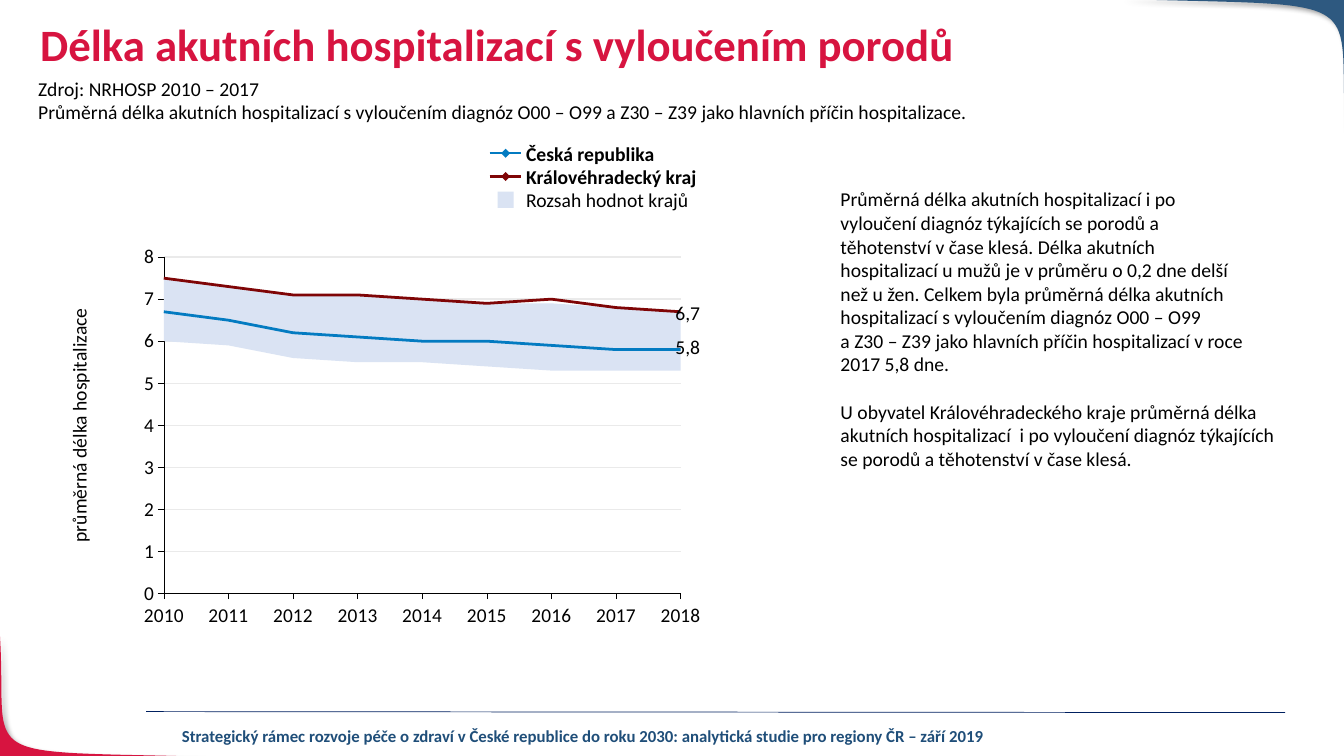
from lxml.etree import SubElement
from pptx import Presentation
from pptx.chart.data import CategoryChartData
from pptx.dml.color import RGBColor
from pptx.enum.chart import XL_CHART_TYPE, XL_TICK_MARK
from pptx.enum.shapes import MSO_CONNECTOR, MSO_SHAPE
from pptx.enum.text import MSO_ANCHOR, PP_ALIGN
from pptx.oxml import parse_xml
from pptx.oxml.ns import nsdecls, qn
from pptx.util import Pt

RED = RGBColor(0xD7, 0x14, 0x40)
STEEL = RGBColor(0x2E, 0x59, 0x80)
NAVY = RGBColor(0x00, 0x20, 0x60)
INK = RGBColor(0x1F, 0x4E, 0x79)
BLUE = RGBColor(0x03, 0x7B, 0xC1)
WINE = RGBColor(0x7F, 0x05, 0x06)
PALE = RGBColor(0xDA, 0xE3, 0xF3)
GRID = RGBColor(0xEA, 0xEA, 0xEA)
BLACK = RGBColor(0, 0, 0)

TITLE = "Délka akutních hospitalizací s vyloučením porodů"
SOURCE = [
    "Zdroj: NRHOSP 2010 – 2017",
    "Průměrná délka akutních hospitalizací s vyloučením diagnóz O00 – O99 "
    "a Z30 – Z39 jako hlavních příčin hospitalizace.",
]
NATION = [
    "Průměrná délka akutních hospitalizací i po",
    "vyloučení diagnóz týkajících se porodů a",
    "těhotenství v čase klesá. Délka akutních",
    "hospitalizací u mužů je v průměru o 0,2 dne delší",
    "než u žen. Celkem byla průměrná délka akutních",
    "hospitalizací s vyloučením diagnóz O00 – O99",
    "a Z30 – Z39 jako hlavních příčin hospitalizací v roce",
    "2017 5,8 dne.",
]
REGION = [
    "U obyvatel Královéhradeckého kraje průměrná délka",
    "akutních hospitalizací  i po vyloučení diagnóz týkajících",
    "se porodů a těhotenství v čase klesá.",
]
AXIS = "průměrná délka hospitalizace"
FOOTER = ("Strategický rámec rozvoje péče o zdraví v České republice do roku 2030: "
          "analytická studie pro regiony ČR – září 2019")
YEARS = [str(year) for year in range(2010, 2019)]
BANDS = [
    ("Minimum krajů", (6, 5.9, 5.6, 5.5, 5.5, 5.4, 5.3, 5.3, 5.3), None),
    ("Rozsah hodnot krajů", (1.5, 1.4, 1.5, 1.6, 1.5, 1.5, 1.6, 1.5, 1.4), PALE),
]
TRENDS = [
    ("Česká republika", (6.7, 6.5, 6.2, 6.1, 6, 6, 5.9, 5.8, 5.8), BLUE),
    ("Královéhradecký kraj", (7.5, 7.3, 7.1, 7.1, 7, 6.9, 7, 6.8, 6.7), WINE),
]
ENDS = [("6,7", 214.6), ("5,8", 239)]
# start, two control points, end, outer corner
CORNERS = [
    (RED, [(153.4, 540.7), (-24.5, 535.7), (5.8, 546.5), (0, 453.6), (-0.7, 540.7)]),
    (STEEL, [(799.9, -0.7), (986.4, 5), (954.7, -7.2), (961.2, 102.2), (961.2, -0.7)]),
]
PLOT = {"x": 0.102, "y": 0.065, "w": 0.879, "h": 0.8}
STEPS = 40


def bezier(pts, t):
    weights = ((1 - t) ** 3, 3 * t * (1 - t) ** 2, 3 * t * t * (1 - t), t ** 3)
    return tuple(Pt(sum(w * p[axis] for w, p in zip(weights, pts))) for axis in (0, 1))


def draw_corner(slide, color, pts):
    curve = [bezier(pts[:4], i / STEPS) for i in range(STEPS + 1)]
    outline = slide.shapes.build_freeform(*curve[0], scale=1.0)
    outline.add_line_segments(curve[1:] + [tuple(Pt(v) for v in pts[4])], close=True)
    shape = outline.convert_to_shape()
    shape.fill.solid()
    shape.fill.fore_color.rgb = color
    shape.line.fill.background()
    shape.shadow.inherit = False
    effects = shape.element.spPr.find(qn("a:effectLst"))
    effects.append(parse_xml(
        f'<a:outerShdw {nsdecls("a")} blurRad="50800" dist="38100" dir="2700000" '
        'algn="tl" rotWithShape="0"><a:srgbClr val="000000">'
        '<a:alpha val="40000"/></a:srgbClr></a:outerShdw>'))


def add_text(slide, lines, box, size=14, color=BLACK, bold=False,
             align=PP_ALIGN.LEFT, wrap=True, label=False):
    """Add one paragraph per line; a label has no margins and sits mid-height."""
    shape = slide.shapes.add_textbox(*map(Pt, box))
    frame = shape.text_frame
    frame.word_wrap = wrap
    if label:
        frame.margin_left = frame.margin_right = 0
        frame.margin_top = frame.margin_bottom = 0
        frame.vertical_anchor = MSO_ANCHOR.MIDDLE
    for i, line in enumerate(lines):
        para = frame.paragraphs[0] if i == 0 else frame.add_paragraph()
        para.text = line
        para.alignment = align
        para.font.name = "Calibri"
        para.font.size = Pt(size)
        para.font.bold = bold
        para.font.color.rgb = color
    return shape


def add_line(slide, ends, color, width):
    line = slide.shapes.add_connector(MSO_CONNECTOR.STRAIGHT, *map(Pt, ends))
    line.line.color.rgb = color
    line.line.width = Pt(width)
    SubElement(line.element.spPr, qn("a:effectLst"))


def add_mark(slide, kind, x, y, size, color):
    """Add a legend mark centred on x, y."""
    mark = slide.shapes.add_shape(
        kind, Pt(x - size / 2), Pt(y - size / 2), Pt(size), Pt(size))
    mark.fill.solid()
    mark.fill.fore_color.rgb = color
    mark.line.fill.background()
    mark.shadow.inherit = False


def style_axis(axis):
    axis.major_tick_mark = XL_TICK_MARK.OUTSIDE
    axis.minor_tick_mark = XL_TICK_MARK.NONE
    axis.format.line.color.rgb = BLACK
    axis.format.line.width = Pt(0.25)
    font = axis.tick_labels.font
    font.name, font.size, font.color.rgb = "Calibri", Pt(14), BLACK


def split_lines(chart):
    """Move the trend series from the area plot to a line plot on the same axes."""
    area = chart.plots[0]
    moved = [series._element for series in list(area.series)[len(BANDS):]]
    block = parse_xml(f'<c:lineChart {nsdecls("c")}><c:grouping val="standard"/>'
                      '<c:varyColors val="0"/></c:lineChart>')
    host = area._element
    host.addnext(block)
    for series in moved:
        block.append(series)
        series.find(qn("c:spPr")).addnext(parse_xml(
            f'<c:marker {nsdecls("c")}><c:symbol val="none"/></c:marker>'))
        SubElement(series, qn("c:smooth")).set("val", "0")
    SubElement(block, qn("c:marker")).set("val", "1")
    for axis in host.findall(qn("c:axId")):
        SubElement(block, qn("c:axId")).set("val", axis.get("val"))


def place_plot(chart):
    area = chart._chartSpace.chart.plotArea
    for old in area.findall(qn("c:layout")):
        area.remove(old)
    modes = "".join(f'<c:{k}Mode val="edge"/>' for k in "xy")
    sizes = "".join(f'<c:{k} val="{v}"/>' for k, v in PLOT.items())
    area.insert(0, parse_xml(
        f'<c:layout {nsdecls("c")}><c:manualLayout><c:layoutTarget val="inner"/>'
        f'{modes}{sizes}</c:manualLayout></c:layout>'))


def add_graph(slide):
    data = CategoryChartData()
    data.categories = YEARS
    for name, values, _ in BANDS + TRENDS:
        data.add_series(name, values)
    chart = slide.shapes.add_chart(XL_CHART_TYPE.AREA_STACKED, Pt(74.2), Pt(164.2),
                                   Pt(426.2), Pt(300.2), data).chart
    chart.has_legend = chart.has_title = False
    chart.font.name, chart.font.size, chart.font.color.rgb = "Arial", Pt(8), BLACK
    plot = chart.plots[0]
    plot.vary_by_categories = False
    series = list(plot.series)
    for item, (_, _, color) in zip(series, BANDS):
        if color is None:
            item.format.fill.background()
        else:
            item.format.fill.solid()
            item.format.fill.fore_color.rgb = color
        item.format.line.fill.background()
    for item, (_, _, color) in zip(series[len(BANDS):], TRENDS):
        item.format.line.color.rgb = color
        item.format.line.width = Pt(2)
    years, days = chart.category_axis, chart.value_axis
    style_axis(years)
    style_axis(days)
    years.has_major_gridlines = False
    days.minimum_scale, days.maximum_scale, days.major_unit = 0, 8, 1
    days.tick_labels.number_format = "#,##0"
    days.tick_labels.number_format_is_linked = False
    days.major_gridlines.format.line.color.rgb = GRID
    days.major_gridlines.format.line.width = Pt(1)
    days._element.find(qn("c:crossBetween")).set("val", "midCat")
    split_lines(chart)
    place_plot(chart)


def add_legend(slide):
    left, top, step = 363.2, 109.5, 16.6
    keys = TRENDS + BANDS[1:]
    for i, (name, _, color) in enumerate(keys):
        y = top + i * step
        trend = i < len(TRENDS)
        if trend:
            add_line(slide, (left - 13.5, y, left + 8.8, y), color, 1.5)
            add_mark(slide, MSO_SHAPE.DIAMOND, left - 2, y, 6.5, color)
        else:
            add_mark(slide, MSO_SHAPE.RECTANGLE, left - 2, y, 11.5, color)
        add_text(slide, [name], (left + 12.6, y - 8.5, 140, 17), bold=trend, label=True)


def main():
    deck = Presentation()
    deck.slide_width, deck.slide_height = Pt(960), Pt(540)
    slide = deck.slides.add_slide(deck.slide_layouts[6])
    for color, pts in CORNERS:
        draw_corner(slide, color, pts)
    add_line(slide, (104.4, 508.3, 918, 509), NAVY, 0.5)
    add_text(slide, [FOOTER], (121, 514.8, 591, 21.6), 12, INK, True, PP_ALIGN.CENTER)
    title = add_text(slide, [TITLE], (21.6, 13, 828, 49.7), 32, RED, True)
    title.text_frame.paragraphs[0].line_spacing = 0.9
    add_text(slide, SOURCE, (20.2, 51.1, 686, 41), wrap=False)
    body = add_text(slide, NATION + REGION, (593.3, 130.3, 326.9, 328.3), wrap=False)
    body.text_frame.paragraphs[len(NATION)].space_before = Pt(17)
    add_graph(slide)
    label = add_text(slide, [AXIS], (-35.3, 291.6, 183.6, 24.5),
                     align=PP_ALIGN.CENTER, wrap=False)
    label.rotation = 270
    add_legend(slide)
    for text, top in ENDS:
        add_text(slide, [text], (482.4, top, 51.8, 17.3), label=True)
    deck.save("out.pptx")


if __name__ == "__main__":
    main()
